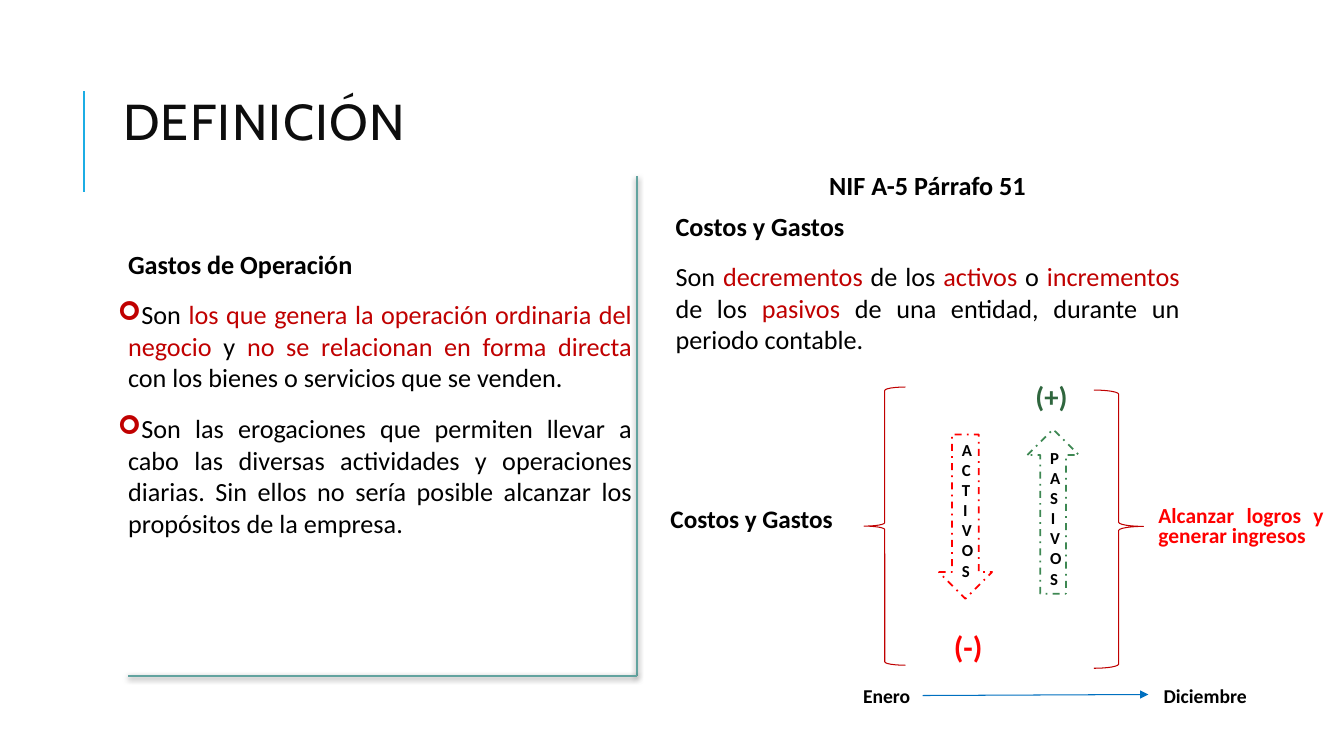
from lxml.etree import SubElement
from pptx import Presentation
from pptx.dml.color import RGBColor
from pptx.enum.dml import MSO_LINE
from pptx.enum.shapes import MSO_CONNECTOR, MSO_SHAPE as Preset
from pptx.enum.text import MSO_ANCHOR as Anchor, MSO_AUTO_SIZE, PP_ALIGN as Align
from pptx.oxml.ns import qn
from pptx.util import Inches, Pt

BLACK = RGBColor(0x00, 0x00, 0x00)
WHITE = RGBColor(0xFF, 0xFF, 0xFF)
INK = RGBColor(0x0D, 0x0D, 0x0D)
SKY = RGBColor(0x1C, 0xAD, 0xE4)
BLUE = RGBColor(0x00, 0x70, 0xC0)
TEAL = RGBColor(0x62, 0xA3, 0x9F)
RED = RGBColor(0xFF, 0x00, 0x00)
CRIMSON = RGBColor(0xC0, 0x00, 0x00)
GREEN = RGBColor(0x3E, 0x88, 0x53)
DARK_GREEN = RGBColor(0x2F, 0x66, 0x3E)


class SlideBuilder:
    """Holds the text style and the slide being built."""

    font_name = "Calibri"
    inset = Inches(0.05)
    hang = Inches(0.1)

    def __init__(self, page):
        self.page = page

    def place(self, shape, left, top, width, height):
        shape.left, shape.top = Inches(left), Inches(top)
        shape.width, shape.height = Inches(width), Inches(height)

    def title(self, text, *area):
        box = self.page.shapes.title
        self.place(box, *area)
        frame = box.text_frame
        frame.vertical_anchor = Anchor.MIDDLE
        frame.auto_size = MSO_AUTO_SIZE.NONE
        para = frame.paragraphs[0]
        para.alignment, para.line_spacing = Align.LEFT, 0.8
        self.set_font(para, 36, INK, False, "Cabin")
        span = para.add_run()
        span.text = text
        span._r.get_or_add_rPr().set("spc", "100")

    def set_font(self, para, size, color, bold, name=None):
        font = para.font
        font.name, font.size, font.bold = name or self.font_name, Pt(size), bold
        font.color.rgb = color

    def prepare(self, frame):
        frame.word_wrap = True
        frame.auto_size = MSO_AUTO_SIZE.NONE
        frame.vertical_anchor = Anchor.TOP
        frame.margin_left = frame.margin_right = self.inset
        frame.margin_top = frame.margin_bottom = self.inset

    def fill_paragraph(self, para, spans, size=18.7, color=BLACK, bold=False,
                       spacing=1.0, align=Align.JUSTIFY, bullet=None):
        """Spans alternate between the paragraph colour and crimson."""
        props = para._p.get_or_add_pPr()
        props.set("marL", str(self.hang))
        props.set("indent", str(-self.hang if bullet else 0))
        if bullet:
            bullet_color = SubElement(props, qn("a:buClr"))
            SubElement(bullet_color, qn("a:srgbClr")).set("val", str(CRIMSON))
            SubElement(props, qn("a:buFont")).set("typeface", "Wingdings")
            SubElement(props, qn("a:buChar")).set("char", bullet)
        else:
            SubElement(props, qn("a:buNone"))
        para.alignment, para.line_spacing = align, spacing
        para.space_before, para.space_after = Pt(12), Pt(2)
        self.set_font(para, size, color, bold)
        for index, text in enumerate(spans):
            span = para.add_run()
            span.text = text
            if index % 2:
                span.font.color.rgb = CRIMSON

    def body(self, index, area, paragraphs):
        box = self.page.placeholders[index]
        self.place(box, *area)
        frame = box.text_frame
        self.prepare(frame)
        for number, (spans, style) in enumerate(paragraphs):
            para = frame.add_paragraph() if number else frame.paragraphs[0]
            self.fill_paragraph(para, spans, **style)

    def label(self, text, area, size, color=BLACK, spacing=0.9):
        box = self.page.shapes.add_textbox(*map(Inches, area))
        self.prepare(box.text_frame)
        para = box.text_frame.paragraphs[0]
        self.fill_paragraph(para, [text], size, color, True, spacing)

    def line(self, start, end, color, width, shadow=False, arrow=False):
        connector = self.page.shapes.add_connector(
            MSO_CONNECTOR.STRAIGHT, *map(Inches, start + end))
        connector.line.color.rgb = color
        connector.line.width = Pt(width)
        props = connector._element.spPr
        if arrow:
            SubElement(props.find(qn("a:ln")), qn("a:tailEnd")).set("type", "triangle")
        effects = SubElement(props, qn("a:effectLst"))
        if shadow:
            outer = SubElement(effects, qn("a:outerShdw"), blurRad=str(Pt(4)),
                               dist=str(Pt(1)), dir="5400000", rotWithShape="0")
            shade = SubElement(outer, qn("a:srgbClr"), val=str(BLACK))
            SubElement(shade, qn("a:alpha"), val="50000")

    def outline(self, preset, area, color, width):
        shape = self.page.shapes.add_shape(preset, *map(Inches, area))
        shape.shadow.inherit = False
        shape.fill.background()
        shape.line.color.rgb = color
        shape.line.width = Pt(width)
        return shape

    def arrow(self, preset, text, area, color):
        shape = self.outline(preset, area, color, 1.25)
        shape.fill.solid()
        shape.fill.fore_color.rgb = WHITE
        shape.line.dash_style = MSO_LINE.DASH_DOT
        frame = shape.text_frame
        frame.word_wrap = True
        frame.vertical_anchor = Anchor.MIDDLE
        para = frame.paragraphs[0]
        para.alignment = Align.CENTER
        self.set_font(para, 12, BLACK, True)
        para.add_run().text = text


def main():
    deck = Presentation()
    deck.slide_width, deck.slide_height = Inches(13.33), Inches(7.5)
    slide = SlideBuilder(deck.slides.add_slide(deck.slide_layouts[3]))
    heading = {"bold": True, "spacing": 0.7}
    item = {"bullet": "➢"}

    # Title with its accent line
    slide.line((0.83, 1.9), (0.83, 0.9), SKY, 1.5)
    slide.title("DEFINICIÓN", 1.12, 0.64, 5.2, 1.22)

    # Operating expenses
    slide.body(1, (1.12, 2.5, 5.2, 4.4), [
        (["Gastos de Operación"], heading),
        (["Son ", "los que genera la operación ordinaria del negocio ", "y ",
          "no se relacionan en forma directa",
          " con los bienes o servicios que se venden."], item),
        (["Son las erogaciones que permiten llevar a cabo las diversas actividades "
          "y operaciones diarias. Sin ellos no sería posible alcanzar los "
          "propósitos de la empresa."], item),
    ])

    # Costs and expenses under the standard
    slide.body(2, (6.55, 1.71, 5.2, 1.99), [
        (["NIF A-5 Párrafo 51"], {**heading, "align": Align.CENTER}),
        (["Costos y Gastos"], heading),
        (["Son ", "decrementos", " de los ", "activos", " o ", "incrementos",
          " de los ", "pasivos", " de una entidad, durante un periodo contable."], {}),
    ])

    # Corner frame between the two columns
    corner = (6.32, 6.71)
    for start in ((6.32, 1.75), (1.27, 6.71)):
        slide.line(start, corner, TEAL, 1.5, shadow=True)

    # Assets fall, liabilities rise
    slide.label("Costos y Gastos", (6.5, 4.98, 2.64, 0.47), 18)
    slide.arrow(Preset.DOWN_ARROW, "ACTIVOS", (9.31, 4.31, 0.53, 1.63), RED)
    slide.arrow(Preset.UP_ARROW, "PASIVOS", (10.19, 4.26, 0.51, 1.63), GREEN)
    slide.label("(-)", (9.31, 6.22, 0.58, 0.47), 22, RED)
    slide.label("(+)", (10.12, 3.75, 0.58, 0.47), 20.4, DARK_GREEN)
    slide.outline(Preset.LEFT_BRACE, (8.57, 3.84, 0.41, 2.76), CRIMSON, 0.75)
    right_brace = slide.outline(Preset.RIGHT_BRACE, (10.85, 3.87, 0.49, 2.76), CRIMSON, 0.75)
    right_brace.adjustments[1] = 0.49
    slide.label("Alcanzar logros y generar ingresos", (11.34, 4.98, 1.84, 0.65),
                15.3, RED, 0.8)

    # Accounting period
    slide.line((9.15, 6.9), (11.39, 6.89), BLUE, 0.75, arrow=True)
    slide.label("Enero", (8.41, 6.76, 0.74, 0.25), 14)
    slide.label("Diciembre", (11.39, 6.76, 1.1, 0.14), 14)

    deck.save("out.pptx")


if __name__ == "__main__":
    main()
